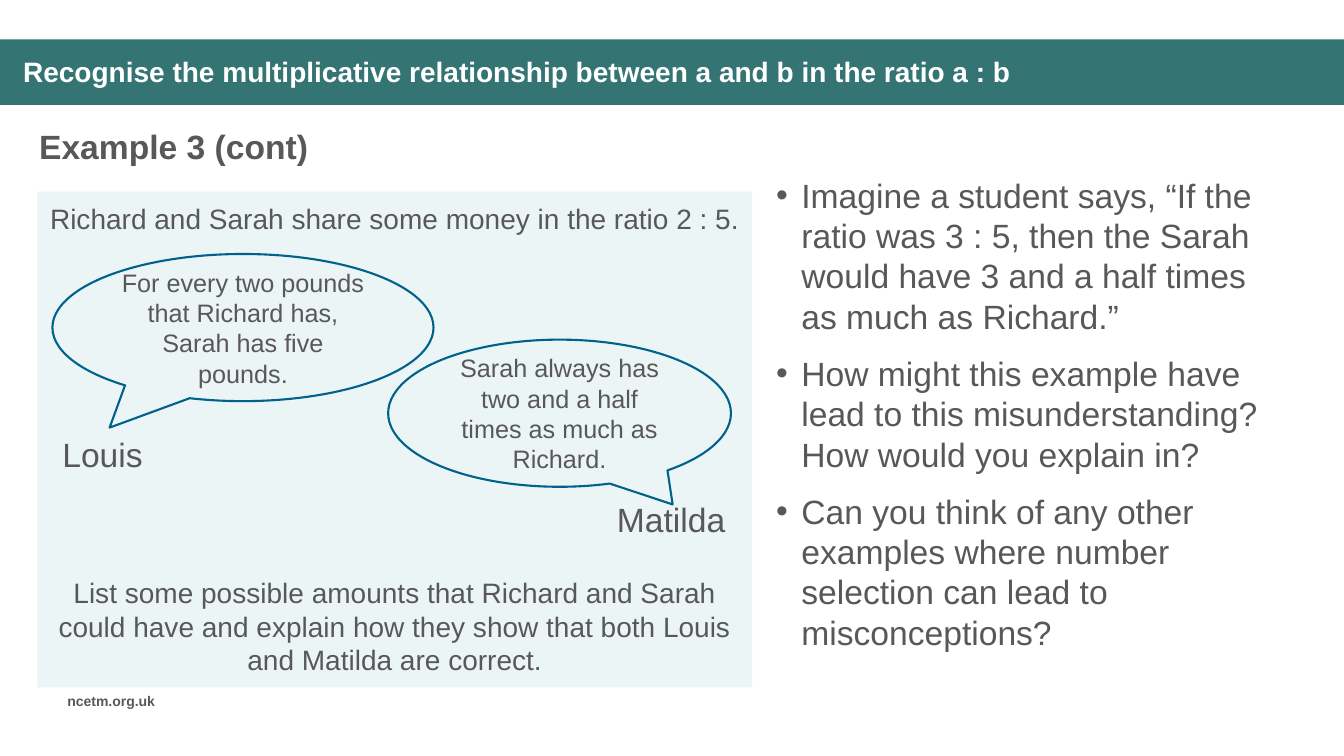
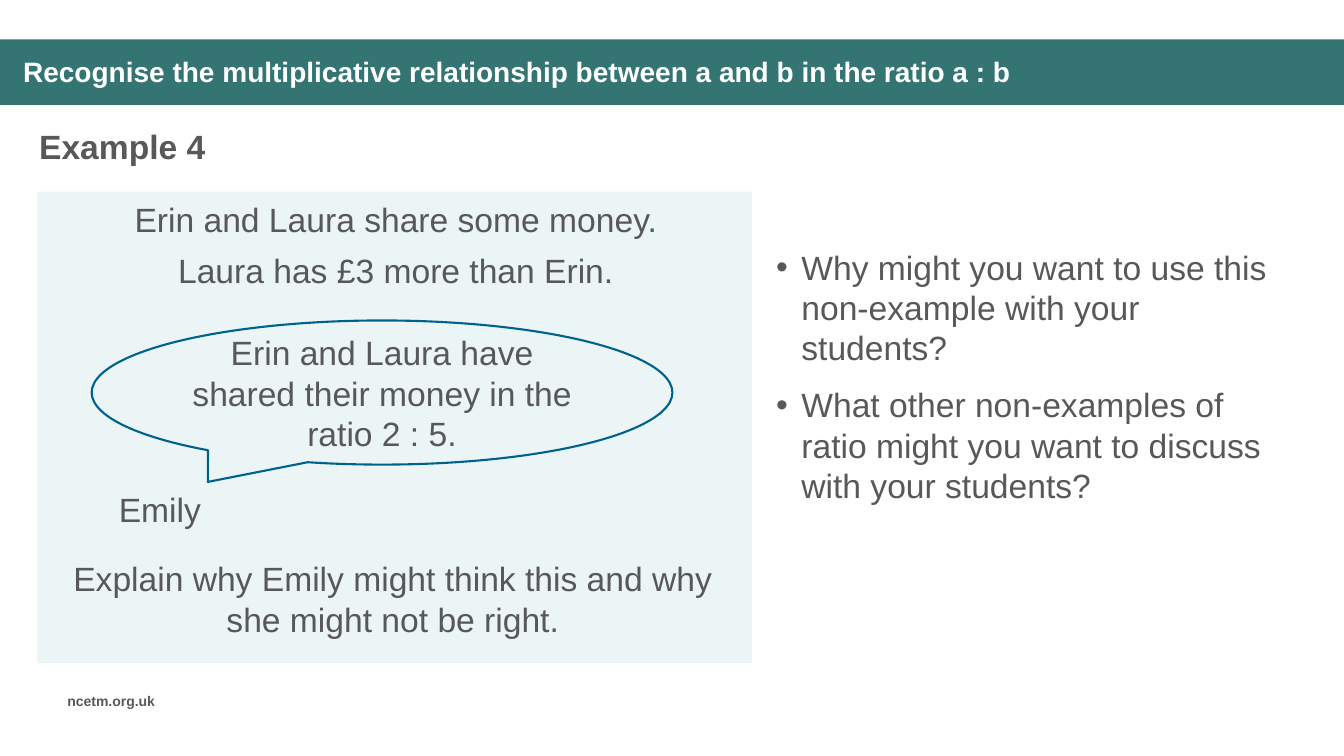
from dataclasses import dataclass, field
from typing import Any, NamedTuple

from lxml.etree import SubElement
from pptx import Presentation
from pptx.dml.color import RGBColor
from pptx.enum.shapes import MSO_SHAPE
from pptx.enum.text import MSO_ANCHOR, MSO_AUTO_SIZE, PP_ALIGN
from pptx.oxml.ns import qn
from pptx.util import Inches, Pt


# Theme: colours, font and type sizes
@dataclass(frozen=True)
class Theme:
    font: str = "Arial"
    text: RGBColor = RGBColor(0x58, 0x58, 0x58)
    white: RGBColor = RGBColor(0xFF, 0xFF, 0xFF)
    band: RGBColor = RGBColor(0x34, 0x75, 0x74)
    panel: RGBColor = RGBColor(0xEB, 0xF5, 0xF5)
    outline: RGBColor = RGBColor(0x00, 0x62, 0x8C)
    large: int = 24
    medium: int = 20
    small: int = 18
    footer: int = 10


THEME = Theme()
TITLE = "Recognise the multiplicative relationship between a and b in the ratio a : b"
FOOTER = "ncetm.org.uk"


class Frame(NamedTuple):
    left: float
    top: float
    width: float
    height: float

    def lengths(self) -> list[int]:
        return [Inches(value) for value in self]


@dataclass(frozen=True)
class Style:
    size: int = THEME.large
    bold: bool = False
    color: RGBColor = THEME.text
    gap_before: float = 0
    bulleted: bool = False
    box_format: dict[str, Any] = field(default_factory=dict)
    para_format: dict[str, Any] = field(default_factory=dict)


@dataclass(frozen=True)
class Block:
    frame: Frame
    lines: list[str]
    style: Style


@dataclass(frozen=True)
class Callout:
    frame: Frame
    words: str
    tail: tuple[float, float]
    size: int


@dataclass(frozen=True)
class Example:
    heading: str
    panel: Frame
    blocks: list[Block]
    callouts: list[Callout]


# Text styles
MIDDLE = {"vertical_anchor": MSO_ANCHOR.MIDDLE}
GROW = {"auto_size": MSO_AUTO_SIZE.SHAPE_TO_FIT_TEXT}
CENTRED = {"alignment": PP_ALIGN.CENTER}

TITLE_STYLE = Style(THEME.medium, True, THEME.white, box_format=MIDDLE,
                    para_format={"line_spacing": 0.9})
HEADING_STYLE = Style(bold=True, box_format=GROW)
FOOTER_STYLE = Style(THEME.footer, True, box_format=GROW)
NAME_STYLE = Style(box_format={"word_wrap": False, **GROW})
BULLET_STYLE = Style(bulleted=True, box_format=MIDDLE,
                     para_format={"space_after": Pt(12)})


def task_style(size: int) -> Style:
    return Style(size, gap_before=4, box_format=GROW,
                 para_format={"space_after": Pt(4), **CENTRED})


def callout_style(size: int) -> Style:
    return Style(size, box_format=MIDDLE, para_format=CENTRED)


# Drawing functions
def set_attributes(target: Any, values: dict[str, Any]) -> None:
    for name, value in values.items():
        setattr(target, name, value)


def add_bullet(para: Any) -> None:
    properties = para._p.get_or_add_pPr()
    properties.set("marL", str(Inches(0.39)))
    properties.set("indent", str(Inches(-0.25)))
    SubElement(properties, qn("a:buFont")).set("typeface", THEME.font)
    SubElement(properties, qn("a:buChar")).set("char", "•")


def write_text(box: Any, lines: list[str], style: Style) -> None:
    frame = box.text_frame
    set_attributes(frame, {"word_wrap": True, **style.box_format})
    for index, line in enumerate(lines):
        para = frame.add_paragraph() if index else frame.paragraphs[0]
        if style.bulleted:
            add_bullet(para)
        set_attributes(para, {"alignment": PP_ALIGN.LEFT,
                              "space_before": Pt(style.gap_before if index else 0),
                              **style.para_format})
        span = para.add_run()
        span.text = line
        set_attributes(span.font, {"name": THEME.font, "size": Pt(style.size),
                                   "bold": style.bold})
        span.font.color.rgb = style.color


def add_block(page: Any, block: Block) -> None:
    box = page.shapes.add_textbox(*block.frame.lengths())
    write_text(box, block.lines, block.style)


def add_rectangle(page: Any, frame: Frame, color: RGBColor) -> None:
    box = page.shapes.add_shape(MSO_SHAPE.RECTANGLE, *frame.lengths())
    box.shadow.inherit = False
    box.fill.solid()
    box.fill.fore_color.rgb = color
    box.line.fill.background()


def add_callout(page: Any, callout: Callout) -> None:
    bubble = page.shapes.add_shape(MSO_SHAPE.OVAL_CALLOUT, *callout.frame.lengths())
    bubble.shadow.inherit = False
    for index, value in enumerate(callout.tail):
        bubble.adjustments[index] = value
    bubble.fill.background()
    bubble.line.color.rgb = THEME.outline
    bubble.line.width = Pt(1.5)
    write_text(bubble, [callout.words], callout_style(callout.size))


def add_example(deck: Any, example: Example) -> None:
    page = deck.slides.add_slide(deck.slide_layouts[6])
    # Shared band, title, footer and heading
    add_rectangle(page, Frame(0, 0.39, 13.33, 0.65), THEME.band)
    for block in (
        Block(Frame(0.13, 0.49, 11.58, 0.47), [TITLE], TITLE_STYLE),
        Block(Frame(0.57, 6.82, 1.21, 0.27), [FOOTER], FOOTER_STYLE),
        Block(Frame(0.29, 1.2, 6.66, 0.5), [example.heading], HEADING_STYLE),
    ):
        add_block(page, block)
    # Task panel, speech bubbles and text
    add_rectangle(page, example.panel, THEME.panel)
    for callout in example.callouts:
        add_callout(page, callout)
    for block in example.blocks:
        add_block(page, block)


# Slide content
EXAMPLES = [
    Example(
        "Example 3 (cont)",
        Frame(0.37, 1.9, 7.09, 4.92),
        [
            Block(Frame(0.37, 1.95, 7.09, 0.44),
                  ["Richard and Sarah share some money in the ratio 2 : 5."],
                  task_style(THEME.medium)),
            Block(Frame(0.37, 5.66, 7.09, 1.11),
                  ["List some possible amounts that Richard and Sarah could have and "
                   "explain how they show that both Louis and Matilda are correct."],
                  task_style(THEME.medium)),
            Block(Frame(0.52, 4.26, 1.01, 0.5), ["Louis"], NAME_STYLE),
            Block(Frame(6.02, 4.9, 1.29, 0.5), ["Matilda"], NAME_STYLE),
            Block(Frame(7.46, 1.67, 5.35, 4.86),
                  ["Imagine a student says, “If the ratio was 3 : 5, then the Sarah "
                   "would have 3 and a half times as much as Richard.”",
                   "How might this example have lead to this misunderstanding? "
                   "How would you explain in?",
                   "Can you think of any other examples where number selection can "
                   "lead to misconceptions?"],
                  BULLET_STYLE),
        ],
        [
            Callout(Frame(0.52, 2.52, 3.78, 1.46),
                    "For every two pounds that Richard has, Sarah has five pounds.",
                    (-0.35, 0.68), THEME.small),
            Callout(Frame(3.85, 3.37, 3.4, 1.46),
                    "Sarah always has two and a half times as much as Richard.",
                    (0.33, 0.62), THEME.small),
        ],
    ),
    Example(
        "Example 4",
        Frame(0.37, 1.9, 7.09, 4.68),
        [
            Block(Frame(0.38, 1.92, 7.09, 1.02),
                  ["Erin and Laura share some money.", "Laura has £3 more than Erin."],
                  task_style(THEME.large)),
            Block(Frame(0.35, 5.49, 7.09, 0.91),
                  ["Explain why Emily might think this and why she might not be right."],
                  task_style(THEME.large)),
            Block(Frame(1.08, 4.8, 1.03, 0.5), ["Emily"], NAME_STYLE),
            Block(Frame(7.46, 1.9, 5.35, 3.66),
                  ["Why might you want to use this non-example with your students?",
                   "What other non-examples of ratio might you want to discuss with "
                   "your students?"],
                  BULLET_STYLE),
        ],
        [
            Callout(Frame(0.91, 3.18, 5.76, 1.43),
                    "Erin and Laura have shared their money in the ratio 2 : 5.",
                    (-0.3, 0.62), THEME.large),
        ],
    ),
]


def main() -> None:
    deck = Presentation()
    deck.slide_width, deck.slide_height = Inches(13.33), Inches(7.5)
    for example in EXAMPLES:
        add_example(deck, example)
    deck.save("out.pptx")


if __name__ == "__main__":
    main()
